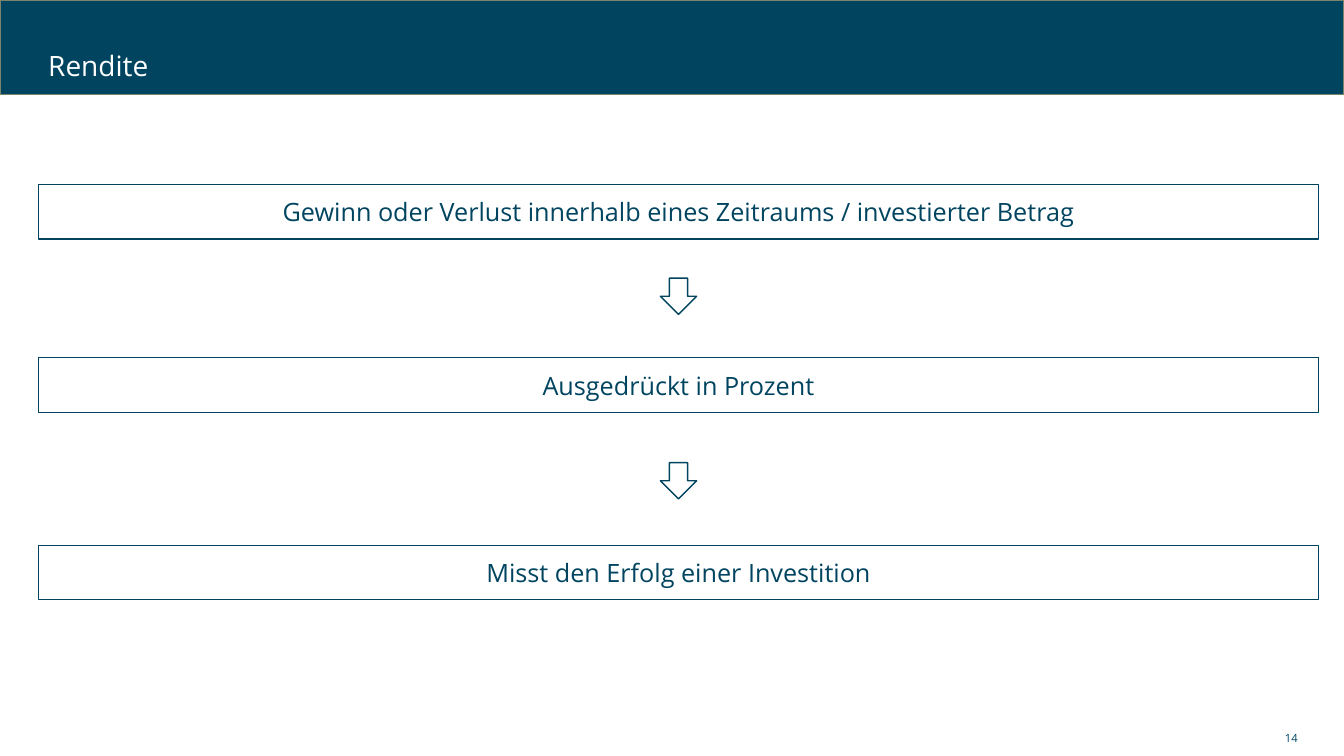
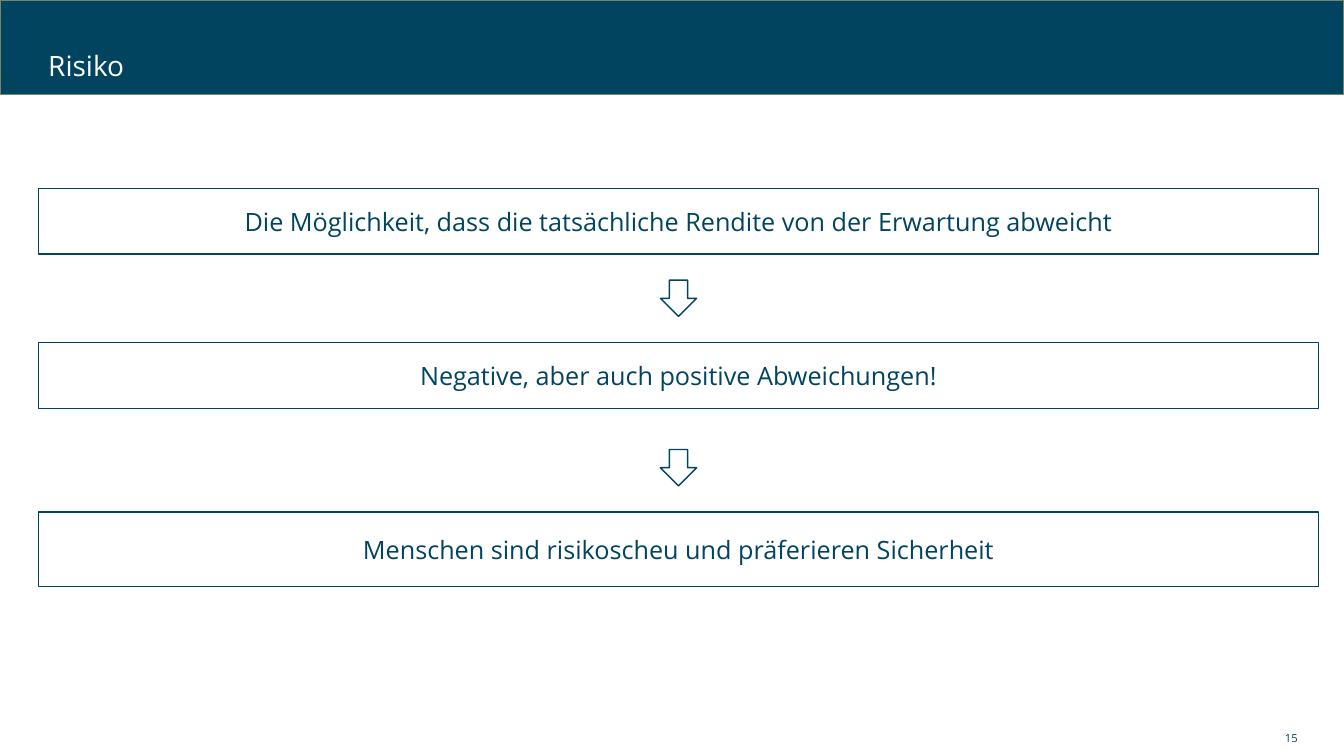
from dataclasses import dataclass

from pptx import Presentation
from pptx.dml.color import RGBColor
from pptx.enum.shapes import MSO_SHAPE
from pptx.enum.text import MSO_ANCHOR, PP_ALIGN
from pptx.shapes.autoshape import Shape
from pptx.slide import Slide
from pptx.util import Inches, Pt

COLORS = {"petrol": "004460", "olive": "7A866C", "white": "FFFFFF"}
FONT = "Open Sans"
SLIDE_WIDTH, SLIDE_HEIGHT = 13.33, 7.5
MARGIN = 0.38
STEP_WIDTH = 12.7
ARROW_SIZE = 0.36
ARROW_LEFT = MARGIN + (STEP_WIDTH - ARROW_SIZE) / 2


@dataclass(frozen=True)
class Step:
    text: str
    top: float
    height: float


@dataclass(frozen=True)
class StepSlide:
    title: str
    number: int
    steps: tuple[Step, ...]
    arrow_tops: tuple[float, ...]


STEP_SLIDES = (
    StepSlide(
        "Rendite",
        14,
        (
            Step("Gewinn oder Verlust innerhalb eines Zeitraums / investierter Betrag", 1.83, 0.54),
            Step("Ausgedrückt in Prozent", 3.55, 0.54),
            Step("Misst den Erfolg einer Investition", 5.41, 0.54),
        ),
        (2.76, 4.59),
    ),
    StepSlide(
        "Risiko",
        15,
        (
            Step("Die Möglichkeit, dass die tatsächliche Rendite von der Erwartung abweicht", 1.87, 0.65),
            Step("Negative, aber auch positive Abweichungen!", 3.4, 0.65),
            Step("Menschen sind risikoscheu und präferieren Sicherheit", 5.08, 0.74),
        ),
        (2.78, 4.46),
    ),
)


def color(name: str) -> RGBColor:
    return RGBColor.from_string(COLORS[name])


def write_text(shape: Shape, text: str, size: float, color_name: str, alignment: PP_ALIGN) -> None:
    frame = shape.text_frame
    frame.word_wrap = True
    frame.vertical_anchor = MSO_ANCHOR.MIDDLE
    paragraph = frame.paragraphs[0]
    paragraph.text = text
    paragraph.alignment = alignment
    paragraph.font.name = FONT
    paragraph.font.size = Pt(size)
    paragraph.font.color.rgb = color(color_name)


def add_outlined_shape(slide: Slide, kind: MSO_SHAPE, left: float, top: float,
                       width: float, height: float, line: str = "petrol") -> Shape:
    shape = slide.shapes.add_shape(kind, Inches(left), Inches(top), Inches(width), Inches(height))
    shape.shadow.inherit = False
    shape.fill.background()
    shape.line.color.rgb = color(line)
    shape.line.width = Pt(1)
    return shape


def add_frame(slide: Slide, title: str, number: int) -> None:
    """Add the title band and the page number that every slide carries."""
    band = add_outlined_shape(slide, MSO_SHAPE.RECTANGLE, 0, 0, SLIDE_WIDTH, 0.94, "olive")
    band.fill.solid()
    band.fill.fore_color.rgb = color("petrol")

    title_box = slide.shapes.add_textbox(Inches(MARGIN), Inches(0.4), Inches(11.8), Inches(0.54))
    write_text(title_box, title, 20, "white", PP_ALIGN.LEFT)
    title_box.text_frame.paragraphs[0].line_spacing = 0.9

    number_box = slide.shapes.add_textbox(Inches(9.43), Inches(7.2), Inches(3.54), Inches(0.24))
    write_text(number_box, str(number), 8, "petrol", PP_ALIGN.RIGHT)


def add_step_slide(presentation: Presentation, content: StepSlide) -> None:
    slide = presentation.slides.add_slide(presentation.slide_layouts[6])
    add_frame(slide, content.title, content.number)
    for step in content.steps:
        box = add_outlined_shape(slide, MSO_SHAPE.RECTANGLE, MARGIN, step.top, STEP_WIDTH, step.height)
        write_text(box, step.text, 18, "petrol", PP_ALIGN.CENTER)
    for top in content.arrow_tops:
        add_outlined_shape(slide, MSO_SHAPE.DOWN_ARROW, ARROW_LEFT, top, ARROW_SIZE, ARROW_SIZE)


def main() -> None:
    presentation = Presentation()
    presentation.slide_width = Inches(SLIDE_WIDTH)
    presentation.slide_height = Inches(SLIDE_HEIGHT)
    for content in STEP_SLIDES:
        add_step_slide(presentation, content)
    presentation.save("out.pptx")


if __name__ == "__main__":
    main()
